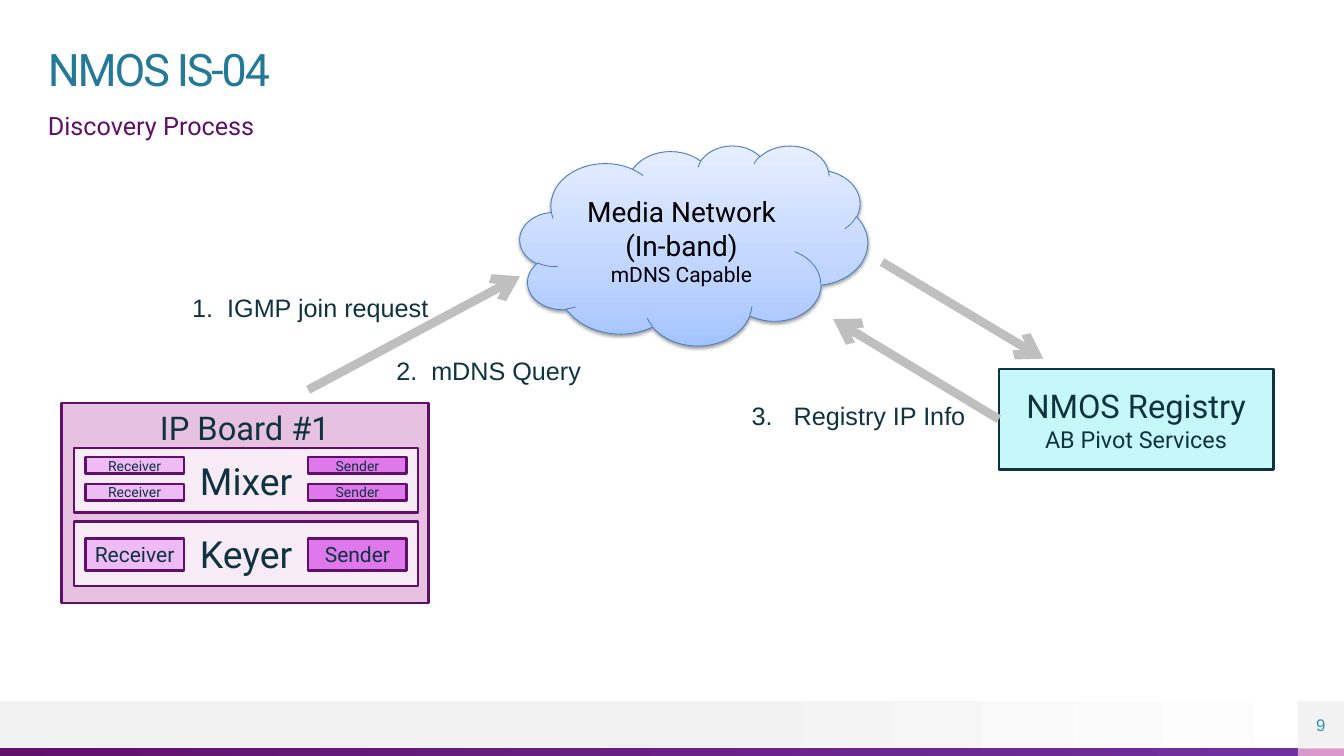
from lxml.etree import SubElement
from pptx import Presentation
from pptx.dml.color import RGBColor
from pptx.enum.shapes import MSO_CONNECTOR, MSO_SHAPE
from pptx.enum.text import MSO_ANCHOR, MSO_AUTO_SIZE, PP_ALIGN
from pptx.oxml.ns import qn
from pptx.util import Pt

TEAL = RGBColor(0x23, 0x79, 0x97)
PAGE_BLUE = RGBColor(0x2C, 0x94, 0xBA)
INK = RGBColor(0x0F, 0x33, 0x40)
BLACK = RGBColor(0, 0, 0)
WHITE = RGBColor(0xFF, 0xFF, 0xFF)
PURPLE = RGBColor(0x60, 0x10, 0x69)
VIOLET = RGBColor(0x70, 0x30, 0xA0)
PINK = RGBColor(0xD7, 0x9A, 0xCB)
BOARD_PINK = RGBColor(0xE7, 0xC2, 0xE0)
PALE_PINK = RGBColor(0xF7, 0xEB, 0xF5)
RECEIVER_PINK = RGBColor(0xEF, 0xBB, 0xF5)
SENDER_PINK = RGBColor(0xDF, 0x78, 0xEA)
AQUA = RGBColor(0xC7, 0xF8, 0xF9)
LIGHT_GRAY = RGBColor(0xF2, 0xF2, 0xF2)
ARROW_GRAY = RGBColor(0xBF, 0xBF, 0xBF)
CLOUD_LINE = RGBColor(0x4B, 0x7E, 0xBC)
CLOUD_STOPS = (
    (0, RGBColor(0xA4, 0xC4, 0xFF)),
    (35, RGBColor(0xBF, 0xD4, 0xFF)),
    (100, RGBColor(0xE6, 0xEE, 0xFF)),
)


def write_line(para, text, size=18, font="Roboto", color=INK, align=PP_ALIGN.CENTER, tracking=None):
    para.alignment = align
    span = para.add_run()
    span.text = text
    span.font.size = Pt(size)
    span.font.name = font
    span.font.color.rgb = color
    if tracking is not None:
        span.font._element.set("spc", str(round(tracking * 100)))
    return para


class Diagram:
    def __init__(self, page):
        self.page = page
        self.shapes = page.shapes

    def shape(self, bounds, fill, line=None, line_width=2, kind=MSO_SHAPE.RECTANGLE):
        shape = self.shapes.add_shape(kind, *map(Pt, bounds))
        shape.shadow.inherit = False
        shape.fill.solid()
        shape.fill.fore_color.rgb = fill
        if line is None:
            shape.line.fill.background()
        else:
            shape.line.color.rgb = line
            shape.line.width = Pt(line_width)
        return shape

    def gradient(self, shape, stops, angle=0):
        shape.fill.gradient()
        shape.fill.gradient_angle = angle
        stop_list = shape._element.spPr.find(qn("a:gradFill")).find(qn("a:gsLst"))
        for stop in list(stop_list):
            stop_list.remove(stop)
        for position, color in stops:
            stop = SubElement(stop_list, qn("a:gs"), pos=str(position * 1000))
            SubElement(stop, qn("a:srgbClr"), val=str(color))

    def soft_shadow(self, shape):
        effects = shape._element.spPr.find(qn("a:effectLst"))
        shadow = SubElement(effects, qn("a:outerShdw"), blurRad=str(Pt(3.1)), dist=str(Pt(1.6)),
                            dir="5400000", rotWithShape="0")
        color = SubElement(shadow, qn("a:srgbClr"), val=str(BLACK))
        SubElement(color, qn("a:alpha"), val="38000")

    def caption(self, shape, *lines, anchor=MSO_ANCHOR.MIDDLE, **style):
        frame = shape.text_frame
        frame.word_wrap = True
        frame.vertical_anchor = anchor
        for index, (text, size) in enumerate(lines):
            para = frame.add_paragraph() if index else frame.paragraphs[0]
            write_line(para, text, size=size, **style)

    def no_margins(self, frame):
        frame.margin_left = frame.margin_right = frame.margin_top = frame.margin_bottom = 0

    def heading(self, bounds, text, line_spacing=1.0, **style):
        frame = self.shapes.add_textbox(*map(Pt, bounds)).text_frame
        frame.word_wrap = True
        self.no_margins(frame)
        para = write_line(frame.paragraphs[0], text, align=PP_ALIGN.LEFT, **style)
        para.line_spacing = line_spacing

    def step(self, number, bounds, text, indent):
        frame = self.shapes.add_textbox(*map(Pt, bounds)).text_frame
        frame.word_wrap = False
        frame.auto_size = MSO_AUTO_SIZE.SHAPE_TO_FIT_TEXT
        para = frame.paragraphs[0]
        properties = para._p.get_or_add_pPr()
        properties.set("marL", str(Pt(indent)))
        properties.set("indent", str(-Pt(indent)))
        SubElement(properties, qn("a:buFont"), typeface="+mj-lt")
        SubElement(properties, qn("a:buAutoNum"), type="arabicPeriod", startAt=str(number))
        write_line(para, text, size=21.6, font="Arial", align=PP_ALIGN.LEFT)

    def arrow(self, start, end):
        arrow = self.shapes.add_connector(MSO_CONNECTOR.STRAIGHT, *map(Pt, start + end))
        arrow.line.color.rgb = ARROW_GRAY
        arrow.line.width = Pt(7.5)
        properties = arrow._element.spPr
        SubElement(properties.find(qn("a:ln")), qn("a:tailEnd"), type="arrow")
        SubElement(properties, qn("a:effectLst"))
        return arrow


def draw_footer(diagram):
    band = diagram.shape((0, 601.2, 1152, 39.6), LIGHT_GRAY)
    diagram.gradient(band, ((53, LIGHT_GRAY), (100, WHITE)))
    stripe = diagram.shape((0, 641.5, 1112.4, 6.5), PURPLE)
    diagram.gradient(stripe, ((0, PURPLE), (100, VIOLET)))
    diagram.shape((1112.4, 641.5, 39.6, 6.5), PINK)
    number = diagram.shape((1112.4, 601.2, 39.6, 39.6), LIGHT_GRAY)
    diagram.no_margins(number.text_frame)
    diagram.caption(number, ("9", 14.4), font="Arial", color=PAGE_BLUE)


def draw_board(diagram):
    diagram.shapes = diagram.page.shapes.add_group_shape().shapes
    board = diagram.shape((52.6, 345.6, 314.6, 171.4), BOARD_PINK, PURPLE)
    diagram.caption(board, ("IP Board #1", 28), anchor=MSO_ANCHOR.TOP)
    for name, top in (("Mixer", 383.8), ("Keyer", 447.1)):
        module = diagram.shape((63.4, top, 295.2, 55.4), PALE_PINK, PURPLE)
        diagram.caption(module, (name, 32))
    for top, height, size in ((392, 14, 12), (415, 14, 12), (461.5, 27.4, 18)):
        for name, left, fill in (("Receiver", 73.2, RECEIVER_PINK), ("Sender", 264.2, SENDER_PINK)):
            port = diagram.shape((left, top, 84.4, height), fill, PURPLE)
            diagram.caption(port, (name, size))
    diagram.shapes = diagram.page.shapes


def main():
    deck = Presentation()
    deck.slide_width, deck.slide_height = Pt(1152), Pt(648)
    diagram = Diagram(deck.slides.add_slide(deck.slide_layouts[6]))

    draw_footer(diagram)
    diagram.heading((41, 41, 1071.4, 41), "NMOS IS-04", line_spacing=0.9,
                    size=38.4, color=TEAL, tracking=-1.8)
    diagram.heading((41, 95, 1071.4, 33.8), "Discovery Process", size=21.6, color=PURPLE)
    draw_board(diagram)

    cloud = diagram.shape((445.7, 124.6, 298.1, 171.4), WHITE, CLOUD_LINE, 0.75, MSO_SHAPE.CLOUD)
    diagram.gradient(cloud, CLOUD_STOPS, angle=90)
    diagram.soft_shadow(cloud)
    diagram.caption(cloud, ("Media Network", 24), ("(In-band)", 24), ("mDNS Capable", 18), color=BLACK)
    registry = diagram.shape((856.1, 316.1, 235.4, 86.4), AQUA, INK)
    diagram.caption(registry, ("NMOS Registry", 28), ("AB Pivot Services", 20))

    diagram.arrow((264.2, 334.1), (445.7, 236.9))
    diagram.arrow((756, 224.6), (894.2, 307.4))
    reply = diagram.arrow((856.1, 359.3), (714.2, 273.6))
    reply.begin_connect(registry, 1)

    steps = (
        ((157.7, 247, 218.9, 33.1), "IGMP join request", 30),
        ((332.6, 301, 174.2, 33.1), "mDNS Query", 30),
        ((637.2, 339.8, 199.4, 33.1), "Registry IP Info", 36),
    )
    for number, (bounds, text, indent) in enumerate(steps, 1):
        diagram.step(number, bounds, text, indent)

    deck.save("out.pptx")


if __name__ == "__main__":
    main()
